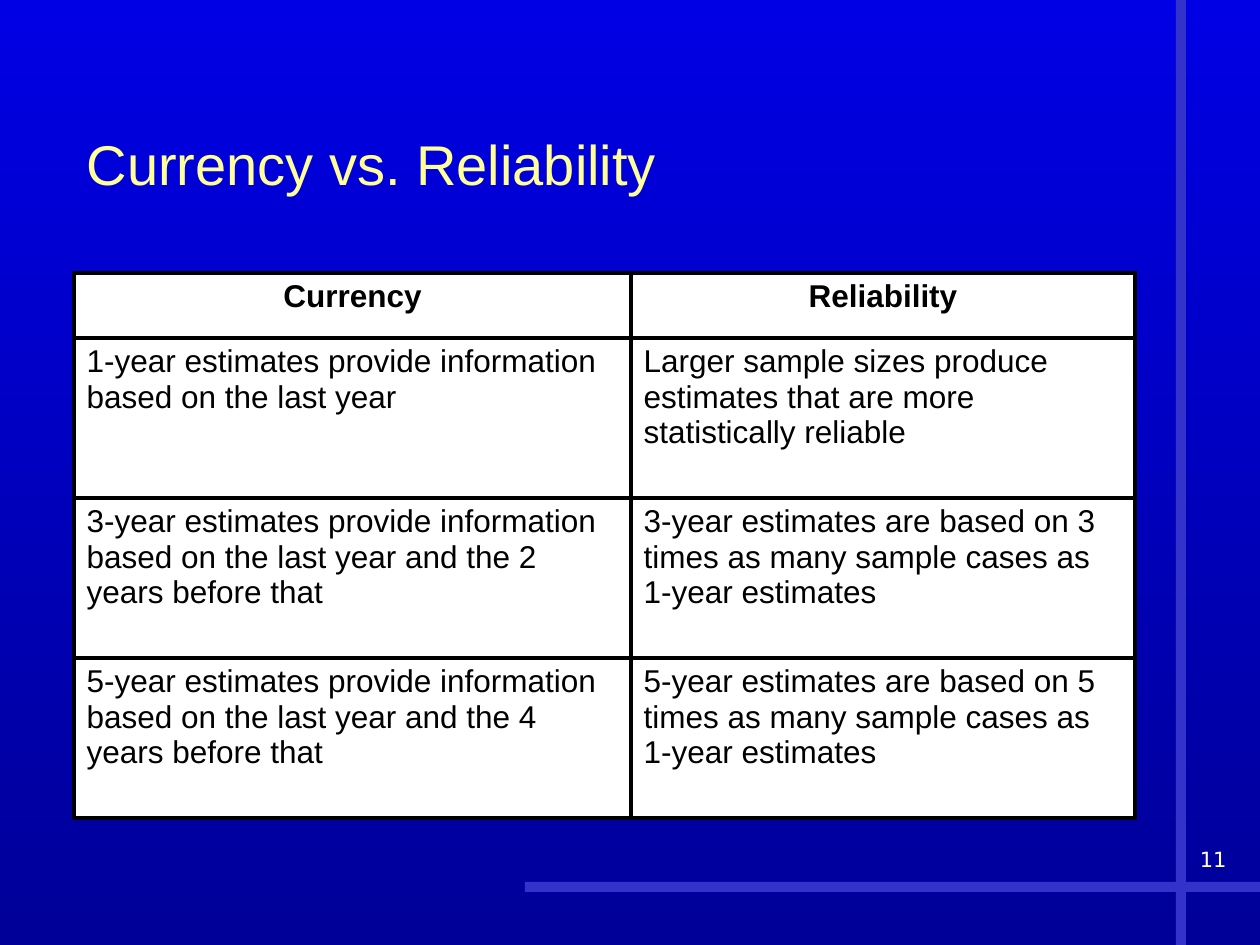
"""Builds the slide that sets currency against reliability."""
from lxml import etree
from pptx import Presentation
from pptx.dml.color import RGBColor
from pptx.enum.shapes import MSO_SHAPE
from pptx.enum.text import MSO_ANCHOR, PP_ALIGN
from pptx.oxml.ns import qn
from pptx.util import Pt

RECT = MSO_SHAPE.RECTANGLE
MIDDLE, TOP = MSO_ANCHOR.MIDDLE, MSO_ANCHOR.TOP
LEFT, CENTER, RIGHT = PP_ALIGN.LEFT, PP_ALIGN.CENTER, PP_ALIGN.RIGHT

SCALE = 914400 / 126
TITLE = "Currency vs. Reliability"
NUMBER = "11"
ROWS = [
    ("Currency", "Reliability"),
    ("1-year estimates provide information based on the last year",
     "Larger sample sizes produce estimates that are more statistically reliable"),
    ("3-year estimates provide information based on the last year and the 2 years before that",
     "3-year estimates are based on 3 times as many sample cases as 1-year estimates"),
    ("5-year estimates provide information based on the last year and the 4 years before that",
     "5-year estimates are based on 5 times as many sample cases as 1-year estimates"),
]
WIDTHS = [557, 504]
HEIGHTS = [65, 160, 160, 160]
BARS = [(525, 882, 735, 10), (1176, 0, 10, 945)]
SKY = ["0000E4", "000099"]


def px(n):
    return round(n * SCALE)


def box(*sides):
    return [px(n) for n in sides]


def color(code):
    return RGBColor.from_string(code)


def write(frame, text, size, code, face="Arial", bold=False, align=LEFT):
    frame.text = text
    frame.word_wrap = True
    line = frame.paragraphs[0]
    line.alignment = align
    font = line.runs[0].font
    font.size, font.name, font.bold = Pt(size), face, bold
    font.color.rgb = color(code)


def border(cell, code, width):
    props = cell._tc.get_or_add_tcPr()
    for side in ("a:lnL", "a:lnR", "a:lnT", "a:lnB"):
        line = etree.SubElement(props, qn(side), w=str(Pt(width)))
        fill = etree.SubElement(line, qn("a:solidFill"))
        etree.SubElement(fill, qn("a:srgbClr"), val=code)


def main():
    deck = Presentation()
    deck.slide_width, deck.slide_height = box(1260, 945)
    slide = deck.slides.add_slide(deck.slide_layouts[5])
    shapes = slide.shapes

    back = slide.background.fill
    back.gradient()
    back.gradient_angle = 270
    for stop, code, place in zip(back.gradient_stops, SKY, (0, 1)):
        stop.color.rgb = color(code)
        stop.position = place

    for sides in BARS:
        bar = shapes.add_shape(RECT, *box(*sides))
        bar.shadow.inherit = False
        bar.fill.solid()
        bar.fill.fore_color.rgb = color("3333CC")
        bar.line.fill.background()

    title = shapes.title
    title.left, title.top, title.width, title.height = box(74, 84, 1060, 158)
    write(title.text_frame, TITLE, 32, "FFFF99")
    title.text_frame.vertical_anchor = MIDDLE

    number = shapes.add_textbox(*box(977, 840, 262, 63)).text_frame
    write(number, NUMBER, 12, "FFFFFF", "DejaVu Sans", align=RIGHT)
    number.vertical_anchor = TOP

    table = shapes.add_table(len(ROWS), len(WIDTHS),
                             *box(74, 273, sum(WIDTHS), sum(HEIGHTS))).table
    for col, width in zip(table.columns, WIDTHS):
        col.width = px(width)
    for r, (row, texts) in enumerate(zip(table.rows, ROWS)):
        row.height = px(HEIGHTS[r])
        head = r == 0
        for cell, text in zip(row.cells, texts):
            border(cell, "000000", 2.25)
            cell.fill.solid()
            cell.fill.fore_color.rgb = color("FFFFFF")
            write(cell.text_frame, text, 18, "000000", bold=head,
                  align=CENTER if head else LEFT)

    deck.save("out.pptx")


if __name__ == "__main__":
    main()
